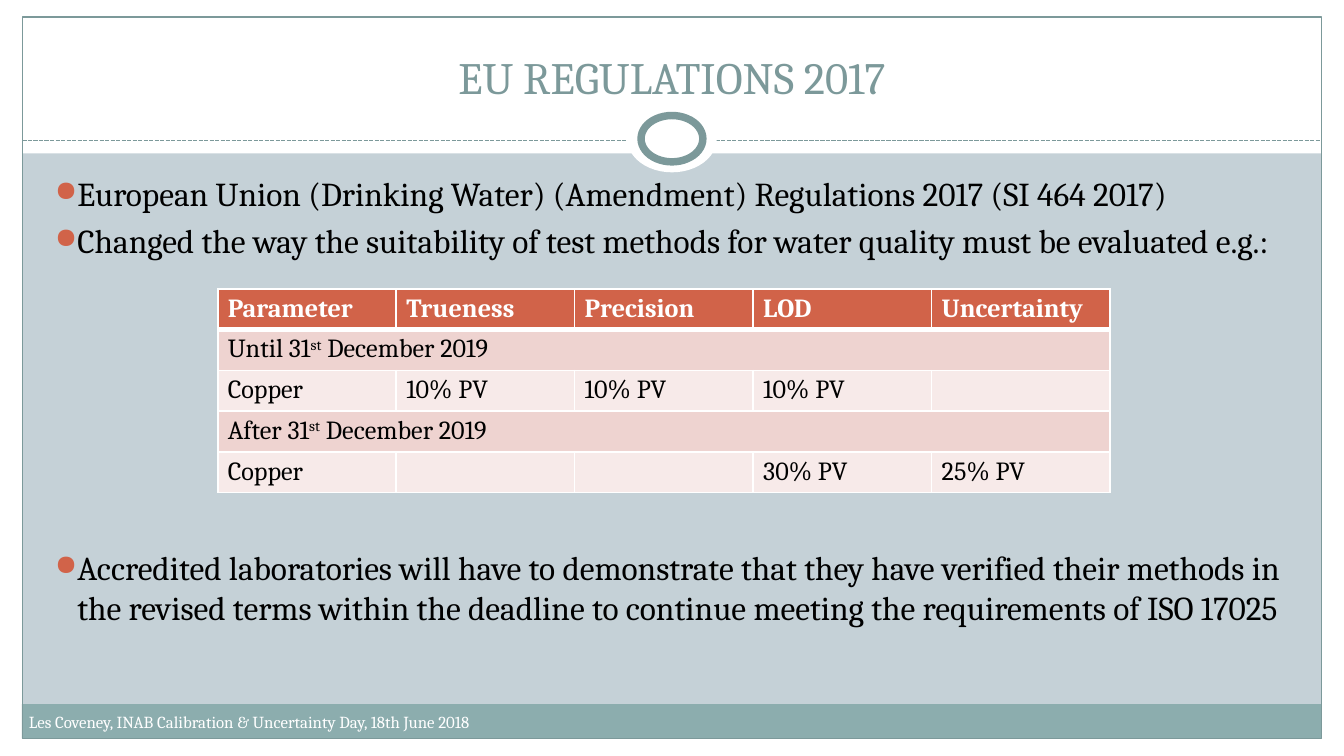
import pptx
import pptx.dml.color
import pptx.enum.dml
import pptx.enum.shapes
import pptx.enum.text
import pptx.oxml
import pptx.oxml.ns
import pptx.util
from lxml import etree

PX = 2286  # 400 px to the inch
FONT = "Cambria"
WHITE = pptx.dml.color.RGBColor(0xFF, 0xFF, 0xFF)
BLACK = pptx.dml.color.RGBColor(0x00, 0x00, 0x00)
BACKGROUND = pptx.dml.color.RGBColor(0xC5, 0xD1, 0xD7)
TEAL = pptx.dml.color.RGBColor(0x7C, 0x99, 0x9A)
FOOTER_TEAL = pptx.dml.color.RGBColor(0x8C, 0xAD, 0xAE)
RUST = pptx.dml.color.RGBColor(0xD1, 0x63, 0x49)
BAND_DARK = pptx.dml.color.RGBColor(0xEE, 0xD3, 0xD0)
BAND_LIGHT = pptx.dml.color.RGBColor(0xF7, 0xEA, 0xE9)

BULLETS = [
    ("European Union (Drinking Water) (Amendment) Regulations 2017 (SI 464 2017)", 0),
    ("Changed the way the suitability of test methods for water quality must be evaluated e.g.:", 3.6),
    ("Accredited laboratories will have to demonstrate that they have verified their methods in "
     "the revised terms within the deadline to continue meeting the requirements of ISO 17025", 153.7),
]
# A row with one entry spans the table; its parts alternate normal and superscript.
TABLE_ROWS = [
    ["Parameter", "Trueness", "Precision", "LOD", "Uncertainty"],
    [("Until 31", "st", " December 2019")],
    ["Copper", "10% PV", "10% PV", "10% PV", ""],
    [("After 31", "st", " December 2019")],
    ["Copper", "", "", "30% PV", "25% PV"],
]
ROW_HEIGHT = 120


def emu(*lengths):
    return [pptx.util.Emu(round(length * PX)) for length in lengths]


def set_font(paragraph, size, color, bold=False):
    paragraph.font.name = FONT
    paragraph.font.size = pptx.util.Pt(size)
    paragraph.font.color.rgb = color
    paragraph.font.bold = bold


def set_margins(holder, side, end):
    holder.margin_left = holder.margin_right = emu(side)[0]
    holder.margin_top = holder.margin_bottom = emu(end)[0]


def add_shape(slide, box, fill=None, line_width=None, kind="RECTANGLE"):
    shape = slide.shapes.add_shape(getattr(pptx.enum.shapes.MSO_SHAPE, kind), *emu(*box))
    shape.shadow.inherit = False
    if fill is None:
        shape.fill.background()
    else:
        shape.fill.solid()
        shape.fill.fore_color.rgb = fill
    if line_width is None:
        shape.line.fill.background()
    else:
        shape.line.color.rgb = TEAL
        shape.line.width = pptx.util.Pt(line_width)


def add_text_frame(slide, box):
    text_frame = slide.shapes.add_textbox(*emu(*box)).text_frame
    text_frame.word_wrap = True
    set_margins(text_frame, 30, 15)
    return text_frame


def add_frame(slide, box):
    """White margins and header, footer band, outline, and ring on a dashed line."""
    left, top, width, height = box
    right, bottom = left + width, top + height
    for margin in [(left, bottom - 50, width, 50), (left, top, width, 457),
                   (left, top, 67, height), (right - 67, top, 67, height)]:
        add_shape(slide, margin, WHITE)
    add_shape(slide, (left + 65, bottom - 154, width - 134, 102), FOOTER_TEAL)
    add_shape(slide, (left + 67, top + 51, width - 134, height - 102), line_width=0.75)

    divider = slide.shapes.add_connector(
        pptx.enum.shapes.MSO_CONNECTOR.STRAIGHT, *emu(left + 67, top + 419, right - 67, top + 419))
    divider.line.color.rgb = TEAL
    divider.line.width = pptx.util.Pt(0.75)
    divider.line.dash_style = pptx.enum.dml.MSO_LINE.SQUARE_DOT
    etree.SubElement(divider._element.spPr, pptx.oxml.ns.qn("a:effectLst"))

    middle = left + width / 2
    for ring_width, ring_height, line_width in [(267, 200, None), (184, 138, 4)]:
        ring = (middle - ring_width / 2, top + 413 - ring_height / 2, ring_width, ring_height)
        add_shape(slide, ring, WHITE, line_width, "OVAL")


def add_title(slide, box):
    text_frame = add_text_frame(slide, box)
    text_frame.vertical_anchor = pptx.enum.text.MSO_ANCHOR.BOTTOM
    paragraph = text_frame.paragraphs[0]
    paragraph.text = "EU REGULATIONS 2017"
    paragraph.alignment = pptx.enum.text.PP_ALIGN.CENTER
    set_font(paragraph, 24, TEAL)


def add_footer(slide, box):
    paragraph = add_text_frame(slide, box).paragraphs[0]
    paragraph.text = "Les Coveney, INAB Calibration & Uncertainty Day, 18th June 2018"
    set_font(paragraph, 9, WHITE)


def add_bullet(paragraph):
    properties = paragraph._p.get_or_add_pPr()
    indent = emu(67)[0]
    properties.set("marL", str(indent))
    properties.set("indent", str(-indent))
    color = etree.SubElement(properties, pptx.oxml.ns.qn("a:buClr"))
    etree.SubElement(color, pptx.oxml.ns.qn("a:srgbClr"), val=str(RUST))
    etree.SubElement(properties, pptx.oxml.ns.qn("a:buSzPct"), val="85000")
    etree.SubElement(properties, pptx.oxml.ns.qn("a:buFont"), typeface="OpenSymbol")
    etree.SubElement(properties, pptx.oxml.ns.qn("a:buChar"), char="●")


def add_body(slide, box):
    """Bullets; the last one's space before leaves room for the table."""
    text_frame = add_text_frame(slide, box)
    for index, (text, space_before) in enumerate(BULLETS):
        paragraph = text_frame.add_paragraph() if index else text_frame.paragraphs[0]
        paragraph.text = text
        add_bullet(paragraph)
        paragraph.space_before = pptx.util.Pt(space_before)
        set_font(paragraph, 17.9, BLACK)


def set_borders(cell, row_index):
    properties = cell._tc.get_or_add_tcPr()
    top = 3 if row_index == 1 else 1
    bottom = 3 if row_index == 0 else 1
    for side, width in [("L", 1), ("R", 1), ("T", top), ("B", bottom)]:
        line = etree.SubElement(properties, pptx.oxml.ns.qn(f"a:ln{side}"), w=str(pptx.util.Pt(width)))
        fill = etree.SubElement(line, pptx.oxml.ns.qn("a:solidFill"))
        etree.SubElement(fill, pptx.oxml.ns.qn("a:srgbClr"), val=str(WHITE))


def fill_cell(cell, content, row_index):
    set_borders(cell, row_index)
    set_margins(cell, 30, 14)
    cell.fill.solid()
    cell.fill.fore_color.rgb = RUST if row_index == 0 else BAND_DARK if row_index % 2 else BAND_LIGHT
    paragraph = cell.text_frame.paragraphs[0]
    if isinstance(content, tuple):
        for index, part in enumerate(content):
            run = paragraph.add_run()
            run.text = part
            if index % 2:
                run._r.get_or_add_rPr().set("baseline", "30000")
    else:
        paragraph.text = content
    set_font(paragraph, 14, BLACK if row_index else WHITE, bold=row_index == 0)


def add_limits_table(slide, box):
    column_count = len(TABLE_ROWS[0])
    graphic_frame = slide.shapes.add_table(len(TABLE_ROWS), column_count, *emu(*box))
    table = graphic_frame.table
    table.first_row = table.horz_banding = False
    for row_index, contents in enumerate(TABLE_ROWS):
        table.rows[row_index].height = emu(ROW_HEIGHT)[0]
        spans = len(contents) == 1
        if spans:
            table.cell(row_index, 0).merge(table.cell(row_index, column_count - 1))
        for column_index in range(column_count):
            content = "" if spans and column_index else contents[column_index]
            fill_cell(table.cell(row_index, column_index), content, row_index)
    graphic_frame.height = emu(box[3])[0]


def main():
    presentation = pptx.Presentation()
    presentation.slide_width, presentation.slide_height = emu(4000, 2250)
    slide = presentation.slides.add_slide(presentation.slide_layouts[6])
    slide.background.fill.solid()
    slide.background.fill.fore_color.rgb = BACKGROUND
    add_frame(slide, (0, 0, 4000, 2250))
    add_title(slide, (133, 76, 3733, 248))
    add_footer(slide, (56, 2104, 1644, 120))
    add_body(slide, (133, 500, 3720, 1500))
    add_limits_table(slide, (648, 860, 2656, 708))
    presentation.save("out.pptx")


if __name__ == "__main__":
    main()
